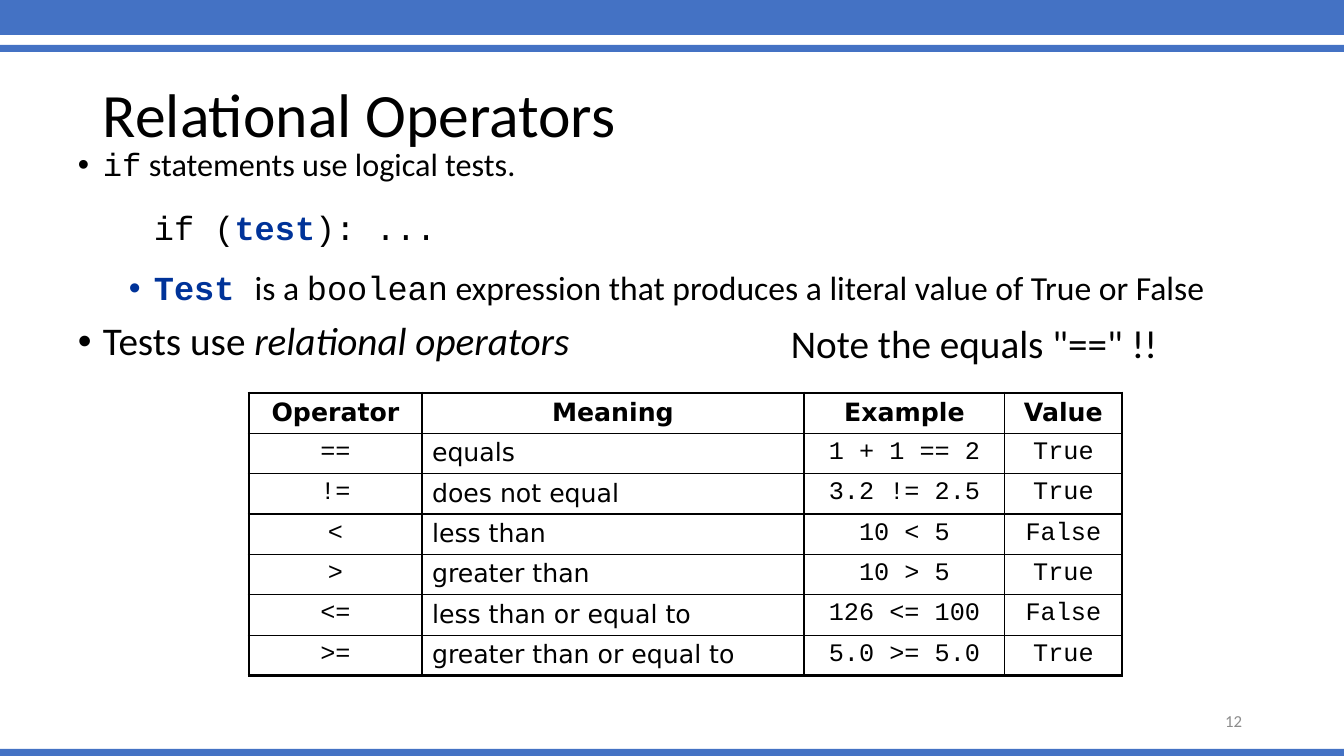
from lxml import etree
from pptx import Presentation
from pptx.dml.color import RGBColor
from pptx.enum.shapes import MSO_SHAPE
from pptx.enum.text import MSO_ANCHOR, PP_ALIGN
from pptx.oxml.ns import qn
from pptx.util import Emu, Pt

RECT = MSO_SHAPE.RECTANGLE
TOP, MID = MSO_ANCHOR.TOP, MSO_ANCHOR.MIDDLE
LEFT, MIDST, RIGHT = PP_ALIGN.LEFT, PP_ALIGN.CENTER, PP_ALIGN.RIGHT

BARS = [(0, 35), (45, 7), (749, 7)]
TITLE = "Relational Operators"
NOTE = 'Note the equals "==" !!'
PAGE = "12"
BODY = [
    (25, True, 10, [("if", "code_sm"), (" statements use logical tests.", "text_sm")]),
    (76, False, 20, [("if (", "code"), ("test", "key"), ("): ...", "code")]),
    (76, True, 17, [
        ("Test ", "key"), ("is a ", "text"), ("boolean", "code"),
        (" expression that produces a literal value of True or False", "text"),
    ]),
    (25, True, 10, [("Tests use ", "big"), ("relational operators", "slant")]),
]
HEAD = ["Operator", "Meaning", "Example", "Value"]
ROWS = [
    ["==", "equals", "1 + 1 == 2", "True"],
    ["!=", "does not equal", "3.2 != 2.5", "True"],
    ["<", "less than", "10 < 5", "False"],
    [">", "greater than", "10 > 5", "True"],
    ["<=", "less than or equal to", "126 <= 100", "False"],
    [">=", "greater than or equal to", "5.0 >= 5.0", "True"],
]
COLS = [173, 382, 201, 117]
GRID = (249, 393, sum(COLS), 282)

SANS, MONO, WIDE = "Calibri", "Courier New", "DejaVu Sans"
THEME = {
    "bar": "4472C4",
    "ink": "000000",
    "paper": "FFFFFF",
    "thin": 1,
    "thick": 2.25,
    "title": {"name": SANS, "size": 44},
    "text_sm": {"name": SANS, "size": 23},
    "code_sm": {"name": MONO, "size": 23},
    "text": {"name": SANS, "size": 24},
    "code": {"name": MONO, "size": 24},
    "key": {"name": MONO, "size": 24, "bold": True, "color": "003399"},
    "big": {"name": SANS, "size": 28},
    "slant": {"name": SANS, "size": 28, "italic": True},
    "head": {"name": WIDE, "size": 18, "bold": True},
    "word": {"name": WIDE, "size": 18},
    "sign": {"name": MONO, "size": 18},
    "page": {"name": SANS, "size": 12, "color": "8C8C8C"},
}
SCALE = 914400 / 100.8


def px(n):
    return Emu(round(n * SCALE))


def rgb(code):
    return RGBColor.from_string(code)


def add_run(para, text, style):
    run = para.add_run()
    run.text = text
    look = {"bold": False, "italic": False, "color": THEME["ink"], **THEME[style]}
    run.font.color.rgb = rgb(look.pop("color"))
    look["size"] = Pt(look["size"])
    for key, value in look.items():
        setattr(run.font, key, value)


def add_box(slide, box, anchor=TOP, pad=True):
    frame = slide.shapes.add_textbox(*map(px, box)).text_frame
    frame.word_wrap = True
    frame.vertical_anchor = anchor
    if not pad:
        for side in ("left", "top", "right", "bottom"):
            setattr(frame, f"margin_{side}", 0)
    return frame


def add_line(slide, box, text, style, align=LEFT, anchor=TOP, pad=True):
    para = add_box(slide, box, anchor, pad).paragraphs[0]
    para.alignment = align
    add_run(para, text, style)


def add_bars(slide, width):
    for top, tall in BARS:
        bar = slide.shapes.add_shape(RECT, 0, px(top), width, px(tall))
        bar.shadow.inherit = False
        bar.fill.solid()
        bar.fill.fore_color.rgb = rgb(THEME["bar"])
        bar.line.fill.background()


def add_body(slide):
    frame = add_box(slide, (68, 144, 1159, 581))
    for i, (indent, dot, gap, runs) in enumerate(BODY):
        para = frame.add_paragraph() if i else frame.paragraphs[0]
        para.line_spacing = 0.9
        para.space_before = Pt(gap)
        for text, style in runs:
            add_run(para, text, style)
        props = para._p.get_or_add_pPr()
        props.set("marL", str(px(indent)))
        props.set("indent", str(px(-25) if dot else 0))
        if dot:
            etree.SubElement(props, qn("a:buFont")).set("typeface", "Arial")
            etree.SubElement(props, qn("a:buChar")).set("char", "•")


def add_edges(cell, edges):
    props = cell._tc.get_or_add_tcPr()
    for i, (side, outer) in enumerate(edges.items()):
        width = THEME["thick" if outer else "thin"]
        line = etree.Element(qn(f"a:ln{side}"), w=str(Pt(width)))
        fill = etree.SubElement(line, qn("a:solidFill"))
        etree.SubElement(fill, qn("a:srgbClr")).set("val", THEME["ink"])
        props.insert(i, line)


def add_grid(slide):
    data = [HEAD] + ROWS
    table = slide.shapes.add_table(len(data), len(COLS), *map(px, GRID)).table
    table.first_row = table.horz_banding = False
    for col, width in zip(table.columns, COLS):
        col.width = px(width)
    for r, row in enumerate(data):
        table.rows[r].height = px(GRID[3] / len(data))
        for c, text in enumerate(row):
            cell = table.cell(r, c)
            cell.fill.solid()
            cell.fill.fore_color.rgb = rgb(THEME["paper"])
            para = cell.text_frame.paragraphs[0]
            para.alignment = LEFT if r and c == 1 else MIDST
            add_run(para, text, "head" if r == 0 else "word" if c == 1 else "sign")
            add_edges(cell, {
                "L": c == 0,
                "R": c == len(COLS) - 1,
                "T": r == 0,
                "B": r == len(data) - 1,
            })


def main():
    deck = Presentation()
    deck.slide_width, deck.slide_height = px(1344), px(756)
    slide = deck.slides.add_slide(deck.slide_layouts[6])
    add_bars(slide, deck.slide_width)
    add_line(slide, (93, 40, 1159, 146), TITLE, "title", anchor=MID)
    add_body(slide)
    add_line(slide, (791, 319, 400, 48), NOTE, "big", pad=False)
    add_grid(slide)
    add_line(slide, (950, 701, 302, 40), PAGE, "page", RIGHT, MID)
    deck.save("out.pptx")


if __name__ == "__main__":
    main()
